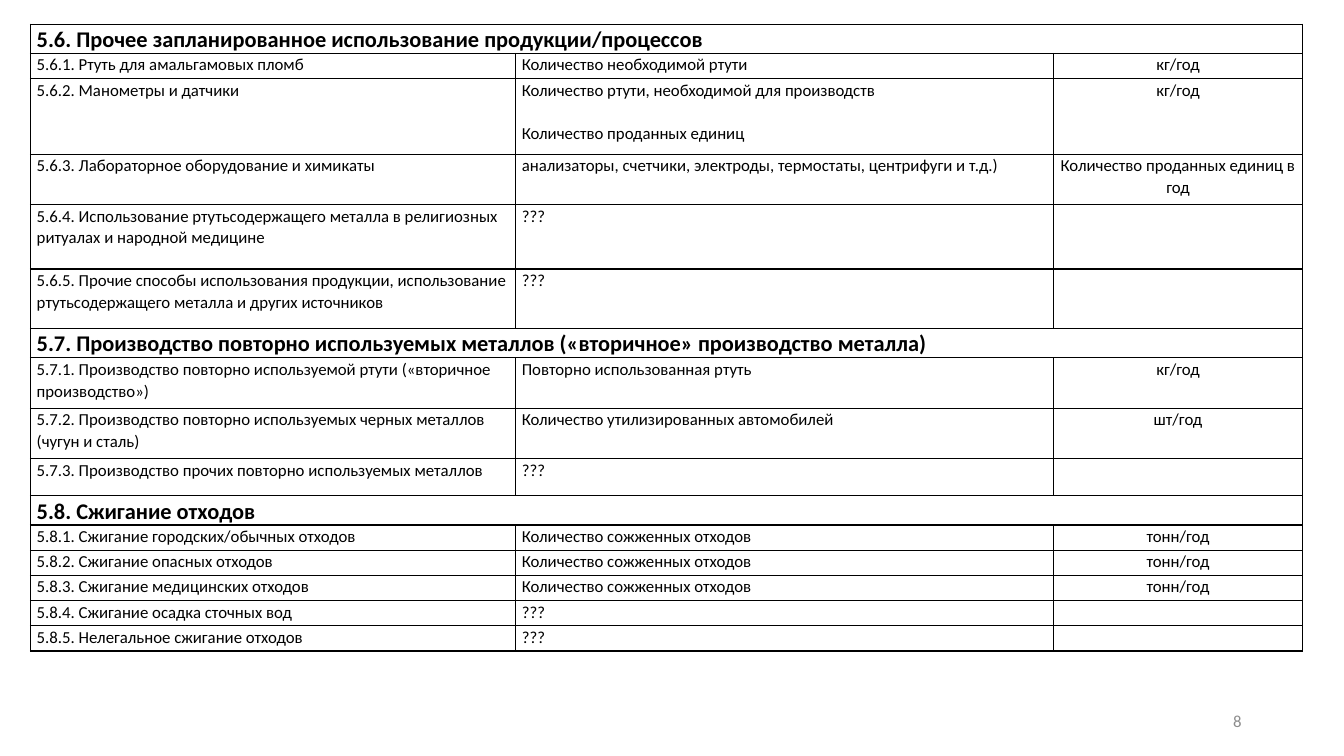
from pptx import Presentation
from pptx.dml.color import RGBColor
from pptx.enum import text
from pptx.oxml import parse_xml
from pptx.oxml.ns import nsdecls
from pptx.util import Pt

FONT = "Calibri"
COLS = [346.5, 384.5, 177.5]
UNKNOWN = "???"
BURNED = "Количество сожженных отходов"

# Each row: height, then one section heading or three cells
ROWS = [
    (18, "5.6. Прочее запланированное использование продукции/процессов"),
    (18, "5.6.1. Ртуть для амальгамовых пломб", "Количество необходимой ртути", "кг/год"),
    (54, "5.6.2. Манометры и датчики",
     "Количество ртути, необходимой для производств\nКоличество проданных единиц", "кг/год"),
    (36, "5.6.3. Лабораторное оборудование и химикаты",
     "анализаторы, счетчики, электроды, термостаты, центрифуги и т.д.)",
     "Количество проданных единиц в год"),
    (46, "5.6.4. Использование ртутьсодержащего металла в религиозных ритуалах "
     "и народной медицине", UNKNOWN, ""),
    (42.5, "5.6.5. Прочие способы использования продукции, использование "
     "ртутьсодержащего металла и других источников", UNKNOWN, ""),
    (18, "5.7. Производство повторно используемых металлов («вторичное» производство металла)"),
    (36, "5.7.1. Производство повторно используемой ртути («вторичное производство»)",
     "Повторно использованная ртуть", "кг/год"),
    (36, "5.7.2. Производство повторно используемых черных металлов (чугун и сталь)",
     "Количество утилизированных автомобилей", "шт/год"),
    (26.5, "5.7.3. Производство прочих повторно используемых металлов", UNKNOWN, ""),
    (18, "5.8. Сжигание отходов"),
    (18, "5.8.1. Сжигание городских/обычных отходов", BURNED, "тонн/год"),
    (18, "5.8.2. Сжигание опасных отходов", BURNED, "тонн/год"),
    (18, "5.8.3. Сжигание медицинских отходов", BURNED, "тонн/год"),
    (18, "5.8.4. Сжигание осадка сточных вод", UNKNOWN, ""),
    (18, "5.8.5. Нелегальное сжигание отходов", UNKNOWN, ""),
]


def color(hex_code):
    return RGBColor.from_string(hex_code)


def set_font(p, size, hex_code, bold=False):
    f = p.font
    f.name, f.size, f.bold = FONT, Pt(size), bold
    f.color.rgb = color(hex_code)


def style_cell(cell):
    """Thin black borders, no fill, tight margins."""
    tcPr = cell._tc.get_or_add_tcPr()
    for side in ("lnL", "lnR", "lnT", "lnB"):
        tcPr.append(parse_xml(
            f'<a:{side} {nsdecls("a")} w="12700"><a:solidFill>'
            f'<a:srgbClr val="000000"/></a:solidFill></a:{side}>'))
    cell.fill.background()
    cell.margin_left = cell.margin_right = Pt(4.5)
    cell.margin_top = cell.margin_bottom = Pt(0)


def fill_cell(cell, content, size, bold, align):
    tf = cell.text_frame
    tf.text = content
    for i, p in enumerate(tf.paragraphs):
        p.alignment = align
        p.line_spacing = 1.07
        if i:
            p.space_before = Pt(15.7)
        set_font(p, size, "000000", bold)
        if not content:
            # Keeps an empty cell from stretching its row
            p._p.get_or_add_endParaRPr().set("sz", str(size * 100))


def add_sources_table(s, left, top):
    height = sum(row[0] for row in ROWS)
    frame = s.shapes.add_table(len(ROWS), len(COLS), Pt(left), Pt(top),
                               Pt(sum(COLS)), Pt(height))
    table = frame.table
    table.first_row = table.horz_banding = False
    for col, width in zip(table.columns, COLS):
        col.width = Pt(width)
    for r, (row_height, *cells) in enumerate(ROWS):
        table.rows[r].height = Pt(row_height)
        heading = len(cells) == 1
        if heading:
            table.cell(r, 0).merge(table.cell(r, len(COLS) - 1))
            cells += [""] * (len(COLS) - 1)
        for c, content in enumerate(cells):
            cell = table.cell(r, c)
            style_cell(cell)
            align = text.PP_ALIGN.CENTER if c == 2 else text.PP_ALIGN.LEFT
            size = 16 if heading and c == 0 else 12
            fill_cell(cell, content, size, heading, align)


def add_page_number(s, left, top, width, height, number):
    sp = s.shapes.add_textbox(Pt(left), Pt(top), Pt(width), Pt(height))
    tf = sp.text_frame
    tf.word_wrap = True
    tf.vertical_anchor = text.MSO_ANCHOR.MIDDLE
    p = tf.paragraphs[0]
    p.text = str(number)
    p.alignment = text.PP_ALIGN.RIGHT
    set_font(p, 12, "8C8C8C")


def main():
    prs = Presentation()
    prs.slide_width, prs.slide_height = Pt(960), Pt(540)
    s = prs.slides.add_slide(prs.slide_layouts[6])
    add_sources_table(s, 21.75, 17.25)
    add_page_number(s, 678, 500.5, 216, 28.75, 8)
    prs.save("out.pptx")


if __name__ == "__main__":
    main()
